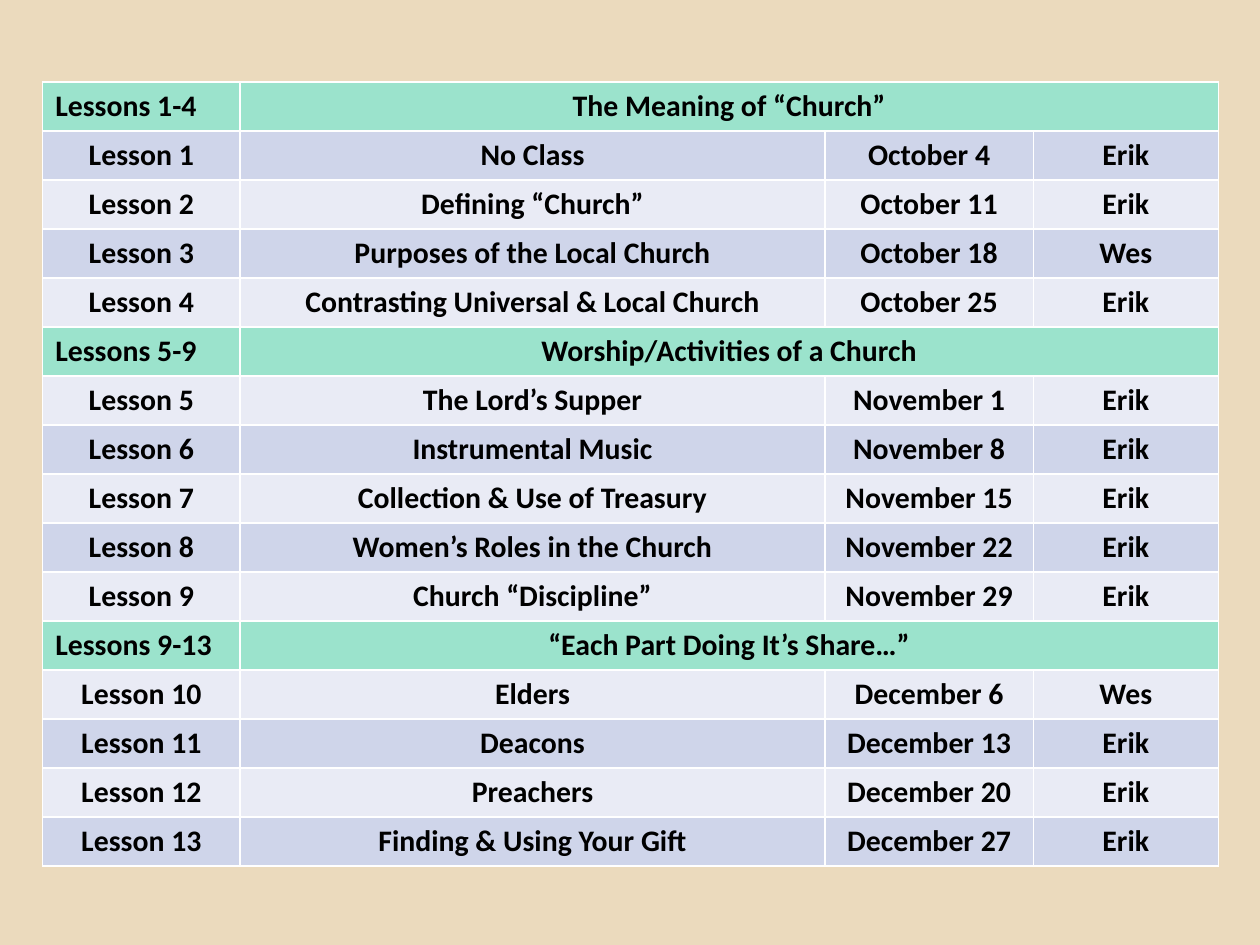
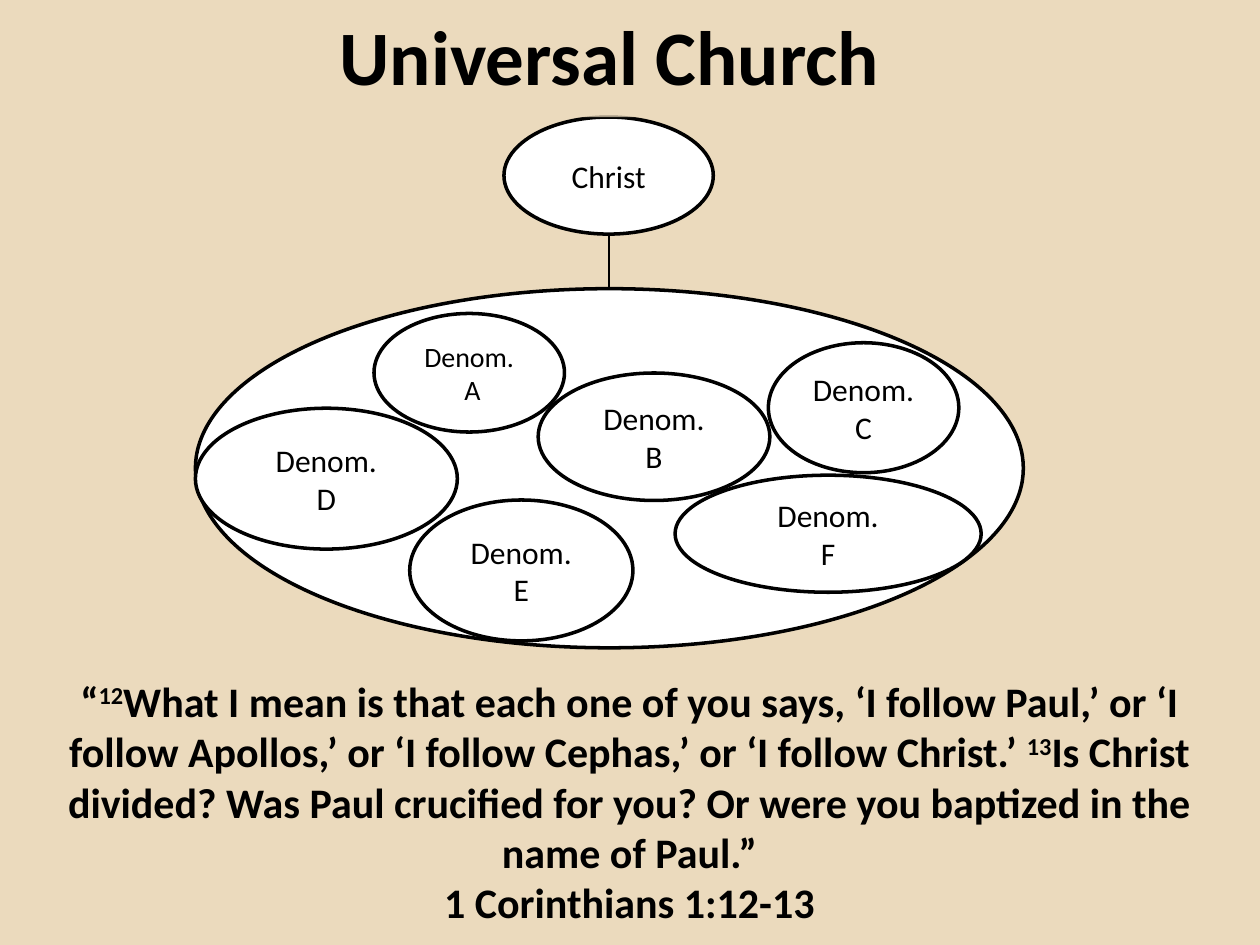
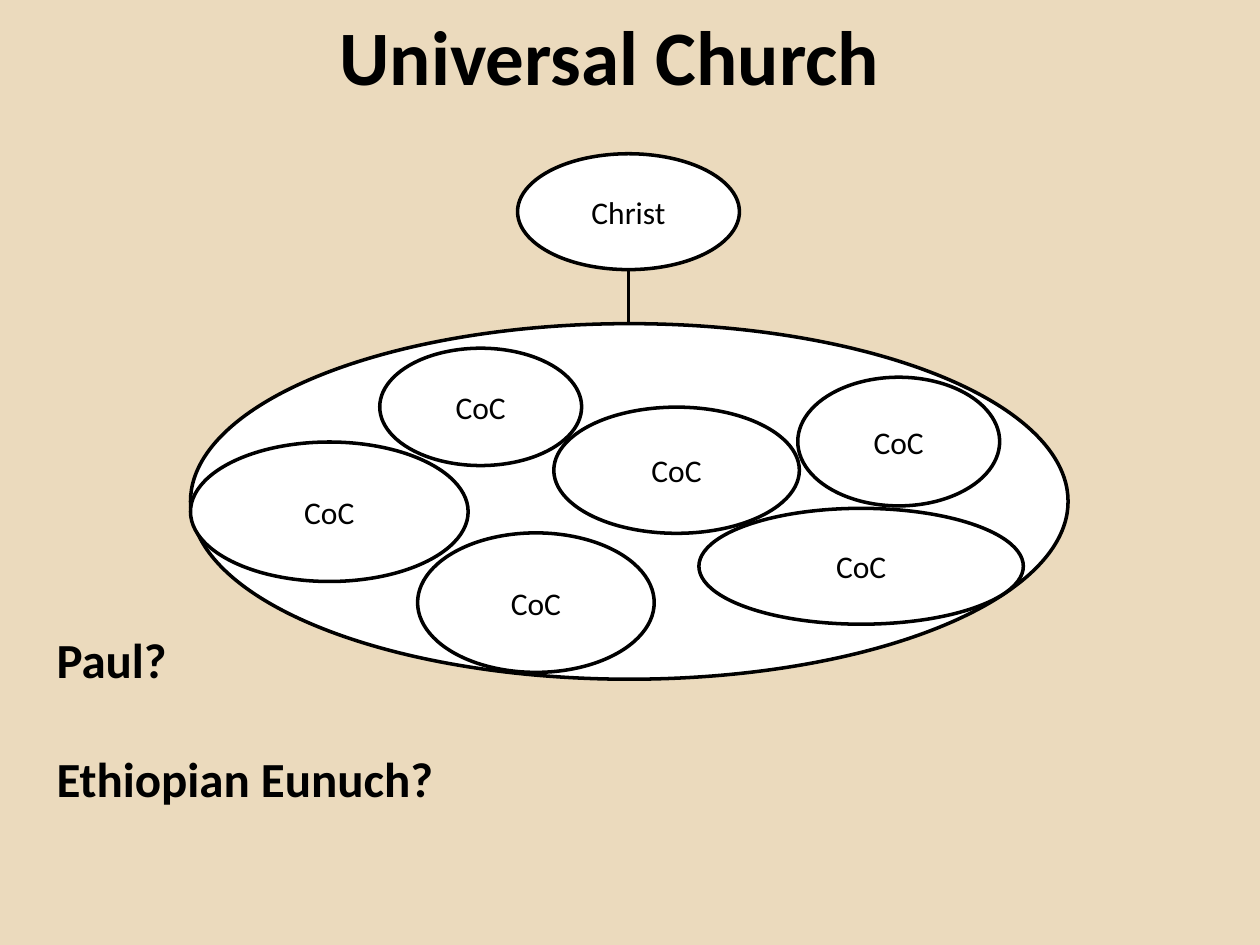
"""Builds a lesson schedule and two diagrams of the universal church."""
from lxml import etree
from pptx import Presentation
from pptx import util as u
from pptx.dml.color import RGBColor
from pptx.enum import shapes, text
from pptx.oxml.ns import qn

SAND = RGBColor(0xEB, 0xDA, 0xBD)
MINT = RGBColor(0x9B, 0xE3, 0xCC)
BLUE = RGBColor(0xCF, 0xD5, 0xEA)
PALE = RGBColor(0xE9, 0xEB, 0xF5)
WHITE = RGBColor(0xFF, 0xFF, 0xFF)
BLACK = RGBColor(0, 0, 0)
FONT = "Calibri"
MID = text.PP_ALIGN.CENTER
LEFT = text.PP_ALIGN.LEFT


def write(para, words, size, bold=False, align=MID):
    para.alignment = align
    run = para.add_run()
    run.text = words
    run.font.name = FONT
    run.font.size = u.Pt(size)
    run.font.bold = bold
    run.font.color.rgb = BLACK
    return run


def add_box(slide, left, top, width, height):
    box = slide.shapes.add_textbox(u.Cm(left), u.Cm(top), u.Cm(width), u.Cm(height))
    frame = box.text_frame
    frame.word_wrap = True
    frame.auto_size = text.MSO_AUTO_SIZE.SHAPE_TO_FIT_TEXT
    return frame


deck = Presentation()
deck.slide_width = u.Cm(25.4)
deck.slide_height = u.Cm(19.05)
back = deck.slide_master.background.fill
back.solid()
back.fore_color.rgb = SAND

ROWS = [
    ("Lessons 1-4", "The Meaning of “Church”"),
    ("Lesson 1", "No Class", "October 4", "Erik"),
    ("Lesson 2", "Defining “Church”", "October 11", "Erik"),
    ("Lesson 3", "Purposes of the Local Church", "October 18", "Wes"),
    ("Lesson 4", "Contrasting Universal & Local Church", "October 25", "Erik"),
    ("Lessons 5-9", "Worship/Activities of a Church"),
    ("Lesson 5", "The Lord’s Supper", "November 1", "Erik"),
    ("Lesson 6", "Instrumental Music", "November 8", "Erik"),
    ("Lesson 7", "Collection & Use of Treasury", "November 15", "Erik"),
    ("Lesson 8", "Women’s Roles in the Church", "November 22", "Erik"),
    ("Lesson 9", "Church “Discipline”", "November 29", "Erik"),
    ("Lessons 9-13", "“Each Part Doing It’s Share…”"),
    ("Lesson 10", "Elders", "December 6", "Wes"),
    ("Lesson 11", "Deacons", "December 13", "Erik"),
    ("Lesson 12", "Preachers", "December 20", "Erik"),
    ("Lesson 13", "Finding & Using Your Gift", "December 27", "Erik"),
]
WIDTHS = [3.98, 11.79, 4.2, 3.73]

plan = deck.slides.add_slide(deck.slide_layouts[6])
grid = plan.shapes.add_table(len(ROWS), len(WIDTHS), u.Cm(0.86), u.Cm(1.65),
                             u.Cm(sum(WIDTHS)), u.Cm(15.77)).table
grid.first_row = grid.horz_banding = False
for col, width in zip(grid.columns, WIDTHS):
    col.width = u.Cm(width)
for i, row in enumerate(ROWS):
    head = len(row) == 2
    if head:
        grid.cell(i, 1).merge(grid.cell(i, 3))
    for j in range(len(WIDTHS)):
        cell = grid.cell(i, j)
        props = cell._tc.get_or_add_tcPr()
        for side in ("lnL", "lnR", "lnT", "lnB"):
            edge = etree.SubElement(props, qn(f"a:{side}"), w=str(u.Pt(1)))
            fill = etree.SubElement(edge, qn("a:solidFill"))
            etree.SubElement(fill, qn("a:srgbClr"), val=str(WHITE))
        cell.fill.solid()
        cell.fill.fore_color.rgb = MINT if head else BLUE if i % 2 else PALE
        if j < len(row):
            write(cell.text_frame.paragraphs[0], row[j], 17, True,
                  LEFT if head and j == 0 else MID)

BODY = (3.94, 5.82, 16.69, 7.24)
CHRIST = (10.16, 2.36, 4.22, 2.36)
PARTS = {
    "D": (3.94, 8.23, 5.28, 2.84),
    "A": (7.54, 6.32, 3.84, 2.39),
    "E": (8.26, 10.08, 4.5, 2.84),
    "B": (10.85, 7.52, 4.67, 2.57),
    "F": (13.61, 9.58, 6.17, 2.36),
    "C": (15.49, 6.91, 3.84, 2.62),
}
VIEWS = [
    {"left": 3.94, "top": 2.36, "wide": 1, "tall": 1, "stem": 1, "denom": True},
    {"left": 3.84, "top": 3.1, "wide": 1.06, "tall": 0.99, "stem": 2, "denom": False},
]

views = []
for view in VIEWS:
    slide = deck.slides.add_slide(deck.slide_layouts[5])
    views.append(slide)
    group = slide.shapes.add_group_shape().shapes
    ovals = [(CHRIST, ["Christ"], 18), (BODY, [], 18)]
    for key, place in PARTS.items():
        if not view["denom"]:
            ovals.append((place, ["CoC"], 18))
        elif key == "A":
            ovals.append((place, ["Denom.", " A"], 16))
        else:
            ovals.append((place, ["Denom.", key], 18))
    drawn = []
    for (left, top, width, height), lines, size in ovals:
        oval = group.add_shape(
            shapes.MSO_SHAPE.OVAL,
            u.Cm(view["left"] + (left - BODY[0]) * view["wide"]),
            u.Cm(view["top"] + (top - CHRIST[1]) * view["tall"]),
            u.Cm(width * view["wide"]), u.Cm(height * view["tall"]))
        oval.shadow.inherit = False
        oval.fill.solid()
        oval.fill.fore_color.rgb = WHITE
        oval.line.color.rgb = BLACK
        oval.line.width = u.Pt(2)
        frame = oval.text_frame
        for n, line in enumerate(lines):
            write(frame.add_paragraph() if n else frame.paragraphs[0], line, size)
        drawn.append(oval)
    christ, body = drawn[:2]
    mid = christ.left + christ.width // 2
    stem = group.add_connector(shapes.MSO_CONNECTOR.STRAIGHT, mid,
                               christ.top + christ.height, mid, body.top)
    stem.line.color.rgb = BLACK
    stem.line.width = u.Pt(view["stem"])
    etree.SubElement(stem.element.spPr, qn("a:effectLst"))

    title = slide.shapes.title
    title.left, title.top = u.Cm(4.09), u.Cm(0.1)
    title.width, title.height = u.Cm(16.41), u.Cm(2.26)
    title.fill.solid()
    title.fill.fore_color.rgb = SAND
    tint = title.element.spPr.find(".//" + qn("a:srgbClr"))
    etree.SubElement(tint, qn("a:alpha"), val="70000")
    title.text_frame.vertical_anchor = text.MSO_ANCHOR.MIDDLE
    para = title.text_frame.paragraphs[0]
    para.line_spacing = 0.9
    write(para, "Universal Church", 44, True)
    title.element.getparent().append(title.element)

VERSE = [
    ("“", False),
    ("12", True),
    ("What I mean is that each one of you says, ‘I follow Paul,’ or ‘I follow "
     "Apollos,’ or ‘I follow Cephas,’ or ‘I follow Christ.’ ", False),
    ("13", True),
    ("Is Christ divided? Was Paul crucified for you? Or were you baptized in the "
     "name of Paul.”", False),
]
quote = add_box(views[0], 0.89, 13.49, 23.6, 5.38)
for words, raised in VERSE:
    run = write(quote.paragraphs[0], words, 24, True)
    if raised:
        run._r.get_or_add_rPr().set("baseline", "30000")
write(quote.add_paragraph(), "1 Corinthians 1:12-13", 24, True)

names = add_box(views[1], 0.89, 12.57, 12.65, 3.96)
write(names.paragraphs[0], "Paul?", 28, True, LEFT)
last = names.add_paragraph()
last.space_before = u.Pt(34)
write(last, "Ethiopian Eunuch?", 28, True, LEFT)

deck.save("out.pptx")
